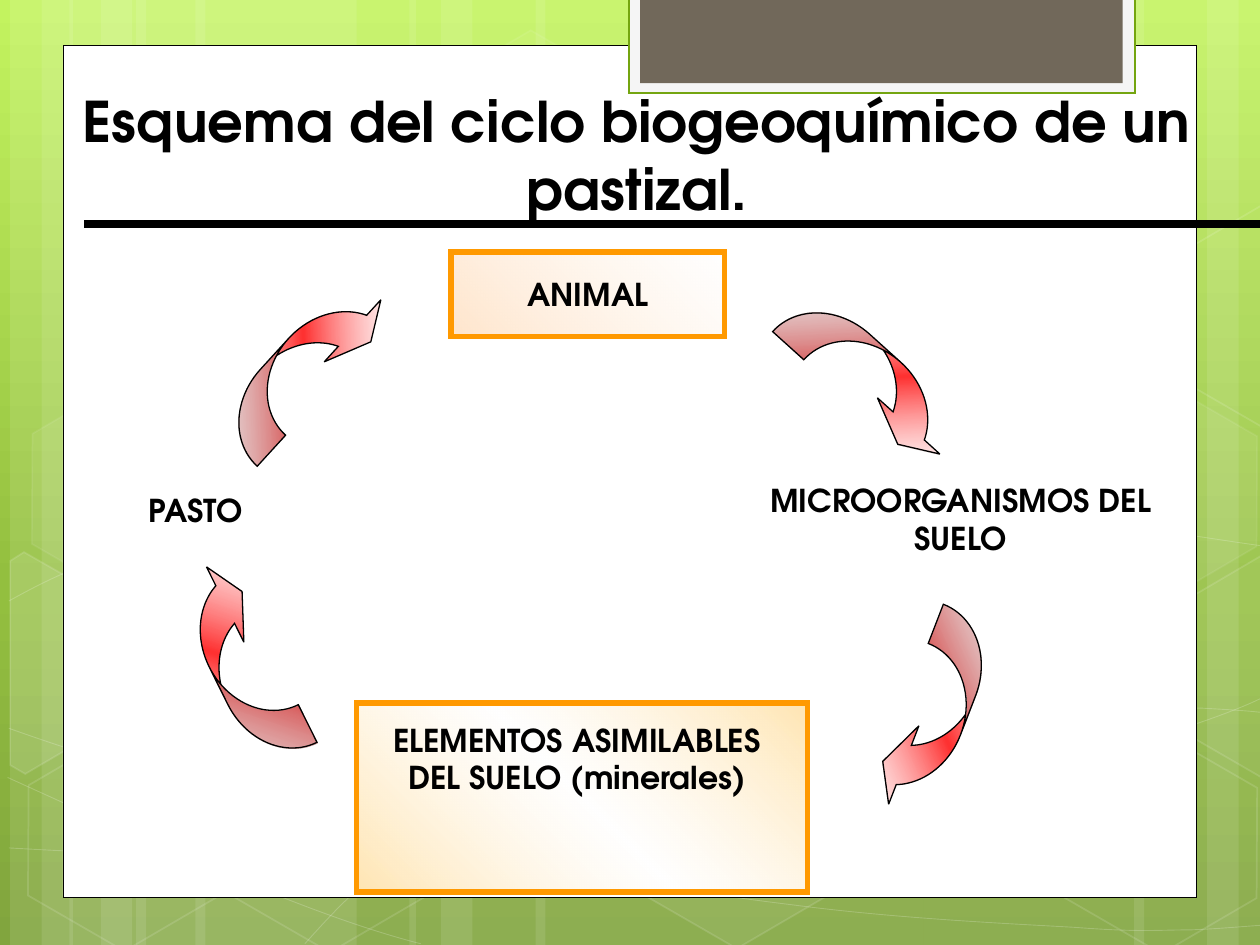
from math import cos, radians, sin

from lxml import etree
from pptx import Presentation
from pptx.dml.color import RGBColor
from pptx.enum.shapes import MSO_CONNECTOR, MSO_SHAPE
from pptx.enum.text import MSO_ANCHOR, PP_ALIGN
from pptx.oxml.ns import qn
from pptx.util import Inches, Pt

RECTANGLE = MSO_SHAPE.RECTANGLE
HEXAGON = MSO_SHAPE.HEXAGON
CURVED_ARROW = MSO_SHAPE.CURVED_LEFT_ARROW
STRAIGHT = MSO_CONNECTOR.STRAIGHT
CENTER, LEFT = PP_ALIGN.CENTER, PP_ALIGN.LEFT
MIDDLE, TOP = MSO_ANCHOR.MIDDLE, MSO_ANCHOR.TOP
FONT = "TeX Gyre Adventor"
WHITE, BLACK, ORANGE = "FFFFFF", "000000", "FF9900"
HEXAGON_TILT = 30

STRIPES = [(1.08, 1.75, 0), (0.08, 0.5, 0), (0.33, 0.83, 0), (1.55, 1.75, 0), (0.55, 0.5, 0),
           (0.8, 0.83, 0), (7.33, 1.75, 180), (9.58, 0.5, 180), (9, 0.83, 180),
           (4.25, 3.08, 0), (3.25, 0.5, 0), (3.5, 0.83, 0)]
HEXAGONS = [(3.34, 0.36, 4, 8), (4.97, 5.89, 6, 12), (0.11, 5.91, 0, 12),
            (0.14, 3.12, 7, 8), (1.74, 5.92, 0, 12), (7.53, 4.53, 10, 12),
            (8.34, 5.93, 0, 12), (8.34, 3.14, 7, 8)]
CUT_HEXAGONS = [
    ((0.36, 5.35), 10,
     [(0.08, 4.45), (0.19, 4.38), (0.96, 4.82), (0.95, 5.7), (0.2, 6.14), (0.08, 6.07)]),
    ((9.85, 5.2), 4,
     [(9.26, 4.85), (10.01, 4.41), (10.09, 4.46), (10.09, 6.13), (10.02, 6.17), (9.26, 5.73)]),
    ((9.85, 2.41), 0,
     [(9.26, 2.07), (10.01, 1.63), (10.1, 1.68), (10.09, 3.35), (10.02, 3.39), (9.26, 2.95)]),
]
WAVES = [
    [(0.07, 6.73), (0.61, 6.76), (1.15, 6.79), (1.9, 6.78), (2.65, 6.77), (3.58, 6.75),
     (4.58, 6.65), (5.58, 6.55), (7, 6.36), (7.92, 6.17), (8.83, 5.98), (9.77, 5.68), (10.07, 5.51)],
    [(0.07, 4.77), (0.36, 4.61), (0.65, 4.46), (1.21, 4.31), (1.78, 4.16), (2.59, 3.94),
     (3.47, 3.87), (4.36, 3.8), (5.44, 3.79), (6.54, 3.87), (7.64, 3.95), (9.47, 4.26), (10.07, 4.34)],
    [(0.06, 6.17), (1.27, 6.72), (2.47, 7.27), (3.34, 7.49)],
    [(0.07, 5.78), (0.38, 5.89), (0.7, 6), (1.28, 6.16), (1.86, 6.31), (2.73, 6.56), (3.57, 6.73),
     (4.4, 6.9), (5.45, 7.08), (6.28, 7.18), (7.11, 7.29), (8, 7.33), (8.53, 7.36),
     (9.05, 7.4), (9.19, 7.38), (9.45, 7.38), (9.71, 7.37), (9.89, 7.35), (10.07, 7.34)],
    [(2.42, 7.49), (2.6, 7.29), (2.78, 7.09), (3.02, 6.91), (3.26, 6.73), (3.6, 6.53), (3.88, 6.39),
     (4.16, 6.25), (4.33, 6.19), (4.7, 6.09), (5.06, 5.99), (5.73, 5.85), (6.08, 5.78),
     (6.44, 5.71), (6.49, 5.71), (6.8, 5.69), (7.11, 5.66), (7.6, 5.63), (7.94, 5.62),
     (8.29, 5.61), (8.86, 5.62), (8.86, 5.62), (9.08, 5.62), (9.31, 5.62), (9.53, 5.62),
     (9.71, 5.63), (9.88, 5.64), (9.97, 5.65), (10.06, 5.66), (10.03, 5.65), (10.06, 5.66)],
]
ARROWS = [(1.67, 4.42, 153.6), (2.17, 2.08, 222.4), (6.67, 2.17, 312), (7.17, 4.83, 21.1)]
ARROW_STOPS = [(0, WHITE, 43), (50, "FF0000", 81), (100, WHITE, 43)]
ANIMAL_STOPS = [(0, "FFCC99", 50), (100, WHITE, 33)]
MINERAL_STOPS = [(0, "FFCC66", 50), (50, WHITE, 29), (100, "FFCC66", 50)]
BACKGROUND_STOPS = [(0, "C3F35F", 100), (62, "93BF3F", 100), (100, "81A53E", 100)]


def rgb(value):
    return RGBColor.from_string(value)


def add_alpha(color, percent):
    if percent < 100:
        etree.SubElement(color, qn("a:alpha"), val=str(percent * 1000))


def paint(fill, owner, color, alpha=100):
    fill.solid()
    fill.fore_color.rgb = rgb(color)
    add_alpha(owner.find(qn("a:solidFill")).find(qn("a:srgbClr")), alpha)


def paint_gradient(fill, owner, stops, angle):
    fill.gradient()
    fill.gradient_angle = 360 - angle
    stop_list = owner.find(qn("a:gradFill")).find(qn("a:gsLst"))
    for old_stop in list(stop_list):
        stop_list.remove(old_stop)
    for position, color, alpha in stops:
        stop = etree.SubElement(stop_list, qn("a:gs"), pos=str(position * 1000))
        add_alpha(etree.SubElement(stop, qn("a:srgbClr"), val=color), alpha)


def style(shape, fill=None, fill_alpha=100, stops=None, line=None, width=1, line_alpha=100):
    shape.shadow.inherit = False
    properties = shape._element.spPr
    if stops:
        paint_gradient(shape.fill, properties, stops, 315)
    elif fill and fill_alpha:
        paint(shape.fill, properties, fill, fill_alpha)
    else:
        shape.fill.background()
    if line:
        shape.line.width = Pt(width)
        outline = properties.find(qn("a:ln"))
        paint(shape.line.fill, outline, line, line_alpha)
        etree.SubElement(outline, qn("a:miter"), lim="800000")
    else:
        shape.line.fill.background()


def add_preset(slide, preset, box, rotation=0, adjustments=(), **look):
    shape = slide.shapes.add_shape(preset, *map(Inches, box))
    shape.rotation = rotation
    for index, value in enumerate(adjustments):
        shape.adjustments[index] = value
    style(shape, **look)
    return shape


def add_outline(slide, points, close, **look):
    start, *rest = [(Inches(x), Inches(y)) for x, y in points]
    builder = slide.shapes.build_freeform(*start)
    builder.add_line_segments(rest, close=close)
    shape = builder.convert_to_shape()
    style(shape, **look)
    return shape


def add_wave(slide, controls):
    wave = add_outline(slide, controls, False, line=WHITE, width=0.5, line_alpha=20)
    outline = wave._element.find(".//" + qn("a:path"))
    segments = outline.findall(qn("a:lnTo"))
    for first in range(0, len(segments), 3):
        curve = etree.SubElement(outline, qn("a:cubicBezTo"))
        for segment in segments[first:first + 3]:
            curve.append(segment[0])
            outline.remove(segment)


def turn(point, center, degrees):
    dx, dy = point[0] - center[0], point[1] - center[1]
    c, s = cos(radians(degrees)), sin(radians(degrees))
    return center[0] + dx * c - dy * s, center[1] + dx * s + dy * c


def write(shape, text, size=18, align=CENTER, anchor=TOP, wrap=True):
    frame = shape.text_frame
    frame.word_wrap = wrap
    frame.vertical_anchor = anchor
    paragraph = frame.paragraphs[0]
    paragraph.text = text
    paragraph.alignment = align
    font = paragraph.font
    font.name, font.size, font.bold = FONT, Pt(size), True
    font.color.rgb = rgb(BLACK)


def add_label(slide, box, text, **format_options):
    write(slide.shapes.add_textbox(*map(Inches, box)), text, **format_options)


def add_rule(slide, x1, x2, y, width):
    rule = slide.shapes.add_connector(STRAIGHT, Inches(x1), Inches(y), Inches(x2), Inches(y))
    rule.line.color.rgb = rgb(BLACK)
    rule.line.width = Pt(width)
    etree.SubElement(rule._element.spPr, qn("a:effectLst"))


def add_backdrop(slide):
    background_fill = slide.background.fill
    background_fill.solid()
    paint_gradient(background_fill, slide.element.find(".//" + qn("p:bgPr")), BACKGROUND_STOPS, 90)
    for left, width, rotation in STRIPES:
        add_preset(slide, RECTANGLE, (left, 0, width, 7.5), rotation, fill=WHITE, fill_alpha=10)
    for controls in WAVES:
        add_wave(slide, controls)
    for left, top, fill_alpha, line_alpha in HEXAGONS:
        add_preset(slide, HEXAGON, (left, top, 1.75, 1.52), HEXAGON_TILT, [0.285], fill=WHITE,
                   fill_alpha=fill_alpha, line=WHITE, line_alpha=line_alpha)
    for center, fill_alpha, corners in CUT_HEXAGONS:
        upright = [turn(corner, center, -HEXAGON_TILT) for corner in corners]
        cut_hexagon = add_outline(slide, upright, True, fill=WHITE, fill_alpha=fill_alpha,
                                  line=WHITE, line_alpha=12)
        cut_hexagon.rotation = HEXAGON_TILT
    add_preset(slide, RECTANGLE, (0.5, 0.36, 9, 6.76), fill=WHITE, line=BLACK, width=0.5)
    add_preset(slide, RECTANGLE, (4.99, -0.02, 4.02, 0.76), fill="F5F5F5", line="74A510", width=1.25)
    add_preset(slide, RECTANGLE, (5.08, -0.02, 3.83, 0.68), fill="71685A")


def add_cycle(slide):
    animal = add_preset(slide, RECTANGLE, (3.58, 2, 2.17, 0.67), stops=ANIMAL_STOPS,
                        line=ORANGE, width=3)
    write(animal, "ANIMAL", anchor=MIDDLE, wrap=False)
    add_preset(slide, RECTANGLE, (2.83, 5.58, 3.58, 1.5), stops=MINERAL_STOPS, line=ORANGE, width=3)
    add_label(slide, (2.83, 5.67, 3.5, 1.3), "ELEMENTOS ASIMILABLES DEL SUELO (minerales)")
    add_label(slide, (1.08, 3.85, 1.92, 0.5), "PASTO", align=LEFT)
    add_label(slide, (5.75, 3.77, 3.75, 0.9), "MICROORGANISMOS DEL SUELO")
    for left, top, rotation in ARROWS:
        add_preset(slide, CURVED_ARROW, (left, top, 0.5, 1.67), rotation, [0.667, 1.333, 0.333],
                   stops=ARROW_STOPS, line=BLACK, width=0.75)


def main():
    presentation = Presentation()
    presentation.slide_width, presentation.slide_height = Inches(10), Inches(7.5)
    slide = presentation.slides.add_slide(presentation.slide_layouts[6])
    add_backdrop(slide)
    add_label(slide, (0.43, 0.64, 9.25, 1.17),
              "Esquema del ciclo biogeoquímico de un pastizal.", size=32)
    add_cycle(slide)
    add_rule(slide, 0.67, 10, 1.78, 4.5)
    presentation.save("out.pptx")


if __name__ == "__main__":
    main()
